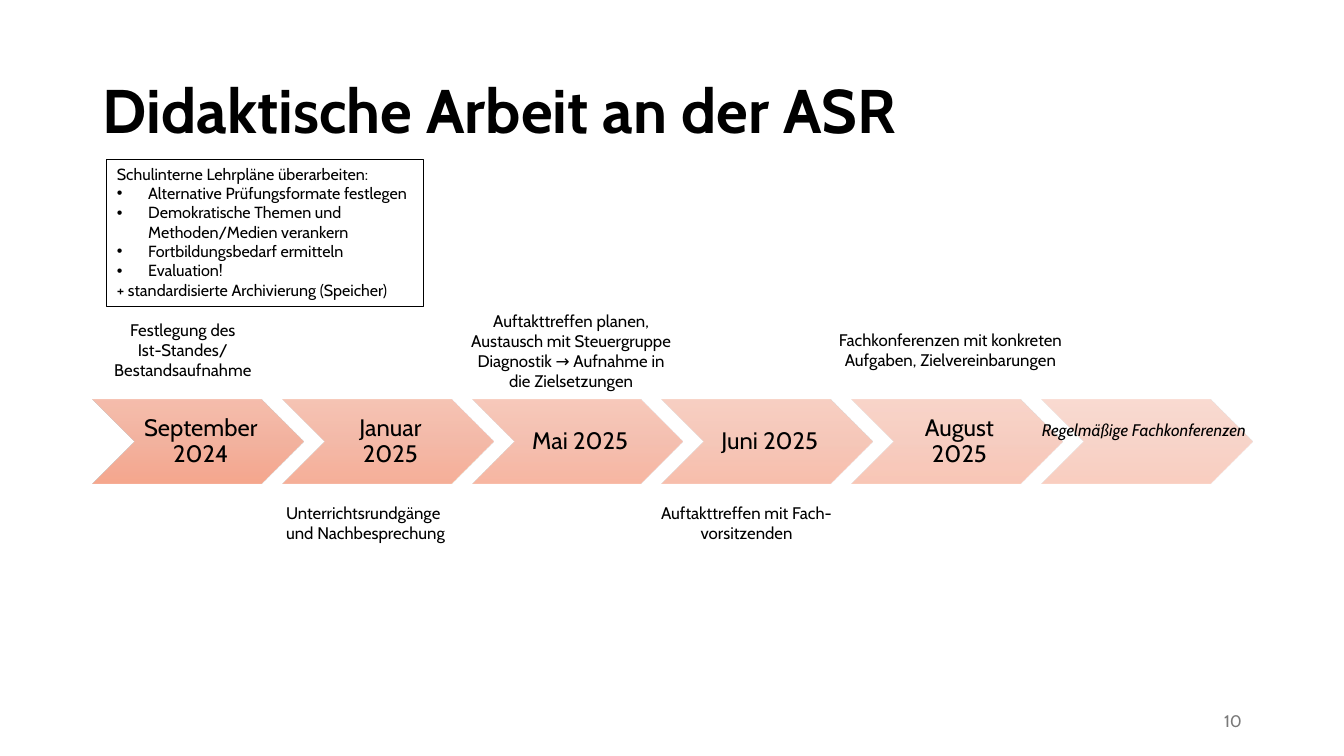
from dataclasses import dataclass

from lxml.etree import SubElement
from pptx import Presentation
from pptx.dml.color import RGBColor
from pptx.enum.shapes import MSO_SHAPE
from pptx.enum.text import MSO_ANCHOR, MSO_AUTO_SIZE, PP_ALIGN
from pptx.oxml.ns import qn
from pptx.util import Cm, Pt


@dataclass(frozen=True)
class Theme:
    """Font, colours and type sizes of the slide."""

    font: str = "Cabin"
    ink: str = "000000"
    muted: str = "797979"
    gradient: tuple = ((0, "F5B8A5"), (50, "F2AB96"), (100, "F59E82"))
    title_size: float = 44
    step_size: float = 17
    note_size: float = 12
    list_size: float = 11.5


THEME = Theme()
LEFT, CENTER, RIGHT = PP_ALIGN.LEFT, PP_ALIGN.CENTER, PP_ALIGN.RIGHT
STEPS = ["September 2024", "Januar 2025", "Mai 2025", "Juni 2025", "August 2025", ""]
STEP_LEFT, STEP_TOP, STEP_WIDTH, STEP_HEIGHT, STEP_PITCH = 2.34, 10.06, 5.31, 2.13, 4.78
NOTES = [
    ((6.96, 12.55, 4.72, 2.06), ["Unterrichtsrundgänge", "und Nachbesprechung"], [LEFT, LEFT]),
    ((2.54, 7.92, 4.14, 2.57),
     ["Festlegung des", "Ist-Standes/", "Bestandsaufnahme"], [CENTER] * 3),
    ((11.51, 7.7, 5.77, 3.68),
     ["Auftakttreffen planen,", "Austausch mit Steuergruppe",
      "Diagnostik → Aufnahme in", "die Zielsetzungen"], [CENTER] * 4),
    ((16.41, 12.55, 4.9, 1.27), ["Auftakttreffen mit Fach-", "vorsitzenden"], [LEFT, CENTER]),
    ((20.6, 8.18, 6.71, 2.06),
     ["Fachkonferenzen mit konkreten", "Aufgaben, Zielvereinbarungen"], [CENTER] * 2),
]
CURRICULUM = [
    ("Schulinterne Lehrpläne überarbeiten:", False),
    ("Alternative Prüfungsformate festlegen", True),
    ("Demokratische Themen und Methoden/Medien verankern", True),
    ("Fortbildungsbedarf ermitteln", True),
    ("Evaluation!", True),
    ("+ standardisierte Archivierung (Speicher)", False),
]


def write_line(frame, text, *, size, color=THEME.ink, align=LEFT, bold=False,
               italic=False, spacing=1.0):
    """Write one formatted paragraph, using the empty first one if there is one."""
    first = frame.paragraphs[0]
    para = frame.add_paragraph() if first.runs else first
    para.alignment = align
    para.line_spacing = spacing
    para.space_before = para.space_after = Pt(0)
    span = para.add_run()
    span.text = text
    span.font.name = THEME.font
    span.font.size = Pt(size)
    span.font.bold = bold
    span.font.italic = italic
    span.font.color.rgb = RGBColor.from_string(color)
    return para


def place(shape, left, top, width, height):
    """Move and size a placeholder in centimetres."""
    shape.left, shape.top = Cm(left), Cm(top)
    shape.width, shape.height = Cm(width), Cm(height)
    shape.text_frame.auto_size = MSO_AUTO_SIZE.NONE


def set_bullet(para, bulleted):
    """Give a paragraph a hanging bullet or take its bullet away."""
    properties = para._p.get_or_add_pPr()
    indent = Cm(0.79) if bulleted else 0
    properties.set("marL", str(indent))
    properties.set("indent", str(-indent))
    if bulleted:
        SubElement(properties, qn("a:buChar")).set("char", "•")
    else:
        SubElement(properties, qn("a:buNone"))


def fill_gradient(shape, opacity):
    """Fill a shape with the vertical theme gradient at an opacity in percent."""
    shape.fill.gradient()
    gradient = shape._element.spPr.find(qn("a:gradFill"))
    for child in list(gradient):
        gradient.remove(child)
    stops = SubElement(gradient, qn("a:gsLst"))
    for position, value in THEME.gradient:
        stop = SubElement(stops, qn("a:gs"), pos=str(position * 1000))
        color = SubElement(stop, qn("a:srgbClr"), val=value)
        SubElement(color, qn("a:alpha"), val=str(opacity * 1000))
    SubElement(gradient, qn("a:lin"), ang="5400000", scaled="0")


def add_step(page, index, label):
    """Add one chevron of the timeline, paler the later it comes."""
    left = STEP_LEFT + index * STEP_PITCH
    chevron = page.shapes.add_shape(
        MSO_SHAPE.CHEVRON, Cm(left), Cm(STEP_TOP), Cm(STEP_WIDTH), Cm(STEP_HEIGHT))
    chevron.shadow.inherit = False
    chevron.line.fill.background()
    fill_gradient(chevron, 90 - 8 * index)
    if label:
        frame = chevron.text_frame
        frame.word_wrap = True
        frame.vertical_anchor = MSO_ANCHOR.MIDDLE
        frame.margin_left = Cm(0.18)
        frame.margin_right = frame.margin_top = frame.margin_bottom = Cm(0.05)
        write_line(frame, label, size=THEME.step_size, align=CENTER, spacing=0.9)


def add_note(page, bounds, lines, aligns, wrap=False, anchor=MSO_ANCHOR.TOP, **style):
    """Add a small text box with one paragraph per line."""
    box = page.shapes.add_textbox(*map(Cm, bounds))
    box.text_frame.word_wrap = wrap
    box.text_frame.vertical_anchor = anchor
    for text, align in zip(lines, aligns):
        write_line(box.text_frame, text, size=THEME.note_size, align=align, **style)


def fill_title(page):
    """Place and write the slide title."""
    title = page.shapes.title
    place(title, 2.34, 1.02, 29.21, 3.68)
    title.text_frame.vertical_anchor = MSO_ANCHOR.MIDDLE
    write_line(title.text_frame, "Didaktische Arbeit an der ASR",
               size=THEME.title_size, bold=True, spacing=0.9)


def fill_curriculum(page):
    """Place and write the framed list."""
    body = page.placeholders[1]
    place(body, 2.69, 4.01, 7.98, 3.71)
    body.line.color.rgb = RGBColor.from_string(THEME.ink)
    body.line.width = Pt(0.75)
    for text, bulleted in CURRICULUM:
        set_bullet(write_line(body.text_frame, text, size=THEME.list_size), bulleted)


def main():
    """Build the slide and save the deck."""
    deck = Presentation()
    deck.slide_width, deck.slide_height = Cm(33.87), Cm(19.05)
    page = deck.slides.add_slide(deck.slide_layouts[1])
    fill_title(page)
    for index, label in enumerate(STEPS):
        add_step(page, index, label)
    for bounds, lines, aligns in NOTES:
        add_note(page, bounds, lines, aligns)
    add_note(page, (25.78, 10.46, 6.1, 1.27), ["Regelmäßige Fachkonferenzen"], [CENTER],
             wrap=True, italic=True)
    fill_curriculum(page)
    add_note(page, (23.93, 17.65, 7.62, 1.02), ["10"], [RIGHT], wrap=True,
             anchor=MSO_ANCHOR.MIDDLE, color=THEME.muted)
    deck.save("out.pptx")


if __name__ == "__main__":
    main()
